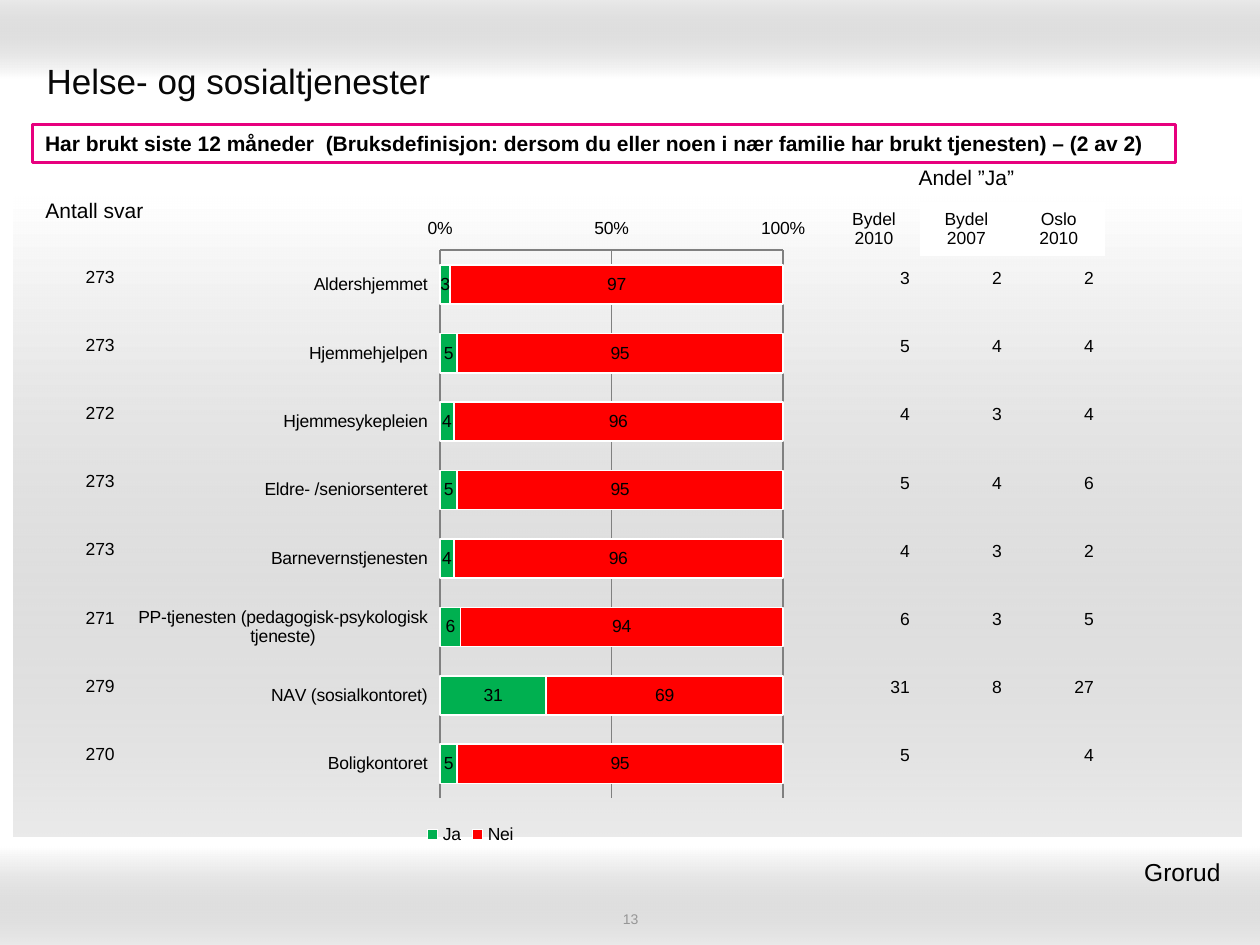
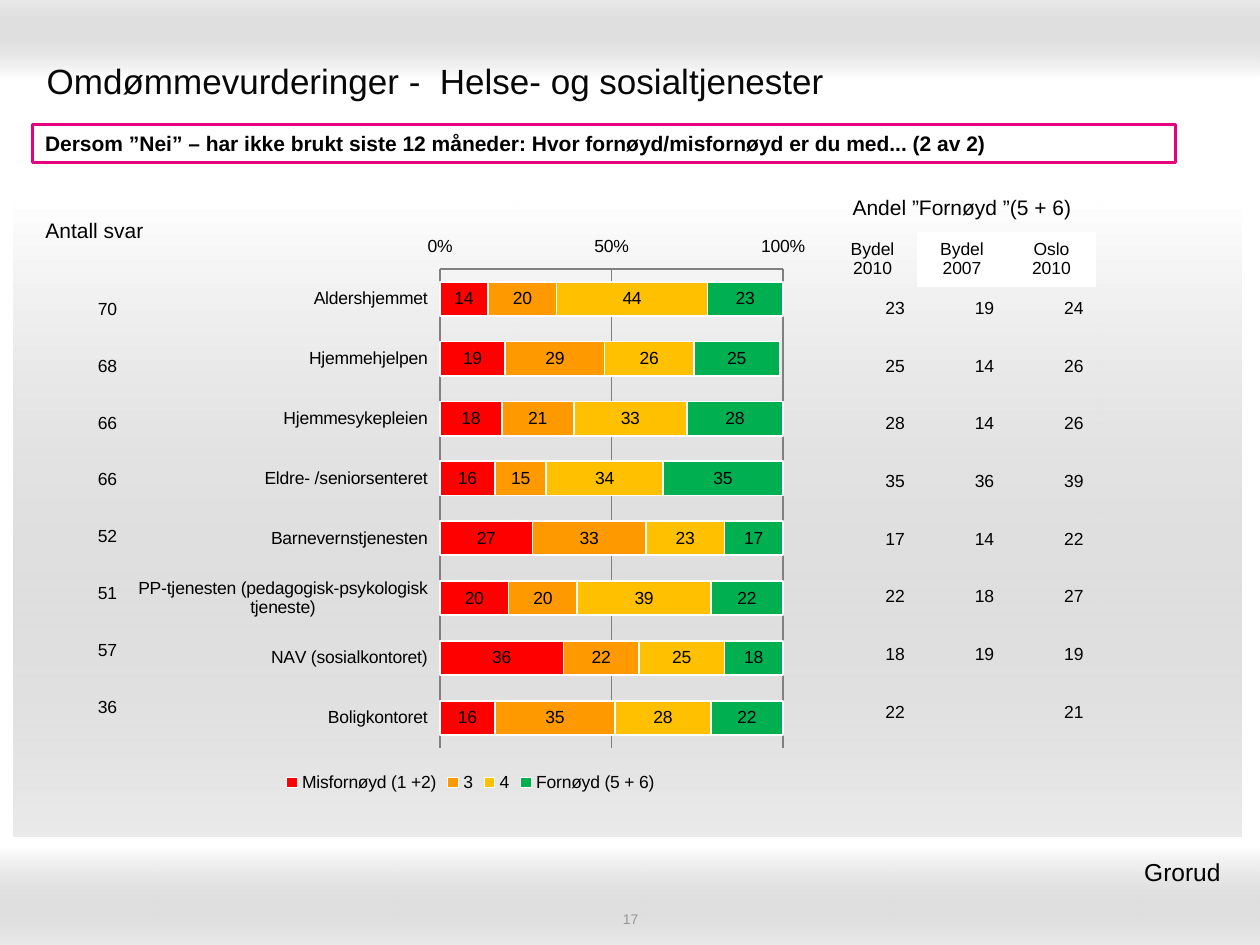
import dataclasses
import typing

import pptx
import pptx.chart.chart
import pptx.chart.data
import pptx.dml.color
import pptx.enum.chart
import pptx.enum.shapes
import pptx.enum.text
import pptx.oxml
import pptx.oxml.ns
import pptx.slide
import pptx.table
import pptx.util

SCALE = 9144
FACE = "Arial"
BLACK, WHITE, PINK, GRAY = "000000", "FFFFFF", "E7007E", "808080"
GREEN, RED, ORANGE, AMBER = "00B050", "FF0000", "FF9900", "FFC000"
NO_STYLE = "{2D5ABB26-0587-4C30-8999-92F81FD0307C}"
ALIGN = pptx.enum.text.PP_ALIGN
MIDDLE = pptx.enum.text.MSO_ANCHOR.MIDDLE
TOPICS = [
    "Aldershjemmet",
    "Hjemmehjelpen",
    "Hjemmesykepleien",
    "Eldre- /seniorsenteret",
    "Barnevernstjenesten",
    "PP-tjenesten (pedagogisk-psykologisk tjeneste)",
    "NAV (sosialkontoret)",
    "Boligkontoret",
]
HEADS = ["Bydel\n2010", "Bydel\n2007", "Oslo\n2010"]


@dataclasses.dataclass(frozen=True)
class Box:
    left: int
    top: int
    width: int
    height: int

    def emu(self) -> list[int]:
        return [side * SCALE for side in dataclasses.astuple(self)]


@dataclasses.dataclass(frozen=True)
class Band:
    box: Box
    angle: int


@dataclasses.dataclass(frozen=True)
class Series:
    name: str
    color: str
    values: list[int]


@dataclasses.dataclass(frozen=True)
class Page:
    title: str
    number: str
    question: str
    chart: Box
    plot: tuple[float, float, float, float]
    series: list[Series]
    share: str
    head: Box
    shares: Box
    rows: list[list[str]]
    label: Box
    count: Box
    counts: list[str]


BANDS = [
    Band(Box(0, 0, 1000, 62), 270),
    Band(Box(0, 672, 1000, 78), 90),
    Band(Box(11, 156, 974, 508), 90),
]
LEGEND = (-0.01, 0.91, 0.98, 0.05)

PAGES = [
    Page(
        title="Helse- og sosialtjenester",
        number="13",
        question="Har brukt siste 12 måneder  (Bruksdefinisjon: dersom du eller noen i nær familie har brukt tjenesten) – (2 av 2)",
        chart=Box(98, 163, 551, 511),
        plot=(0.456, 0.07, 0.494, 0.851),
        series=[
            Series("Ja", GREEN, [3, 5, 4, 5, 4, 6, 31, 5]),
            Series("Nei", RED, [97, 95, 96, 95, 96, 94, 69, 95]),
        ],
        share="Andel ”Ja”",
        head=Box(657, 123, 220, 80),
        shares=Box(659, 194, 219, 433),
        rows=[["3", "2", "2"], ["5", "4", "4"], ["4", "3", "4"], ["5", "4", "6"],
              ["4", "3", "2"], ["6", "3", "5"], ["31", "8", "27"], ["5", "", "4"]],
        label=Box(4, 138, 142, 59),
        count=Box(30, 193, 71, 433),
        counts=["273", "273", "272", "273", "273", "271", "279", "270"],
    ),
    Page(
        title="Omdømmevurderinger -  Helse- og sosialtjenester",
        number="17",
        question="Dersom ”Nei” – har ikke brukt siste 12 måneder: Hvor fornøyd/misfornøyd er du med... (2 av 2)",
        chart=Box(98, 179, 551, 454),
        plot=(0.456, 0.076, 0.494, 0.837),
        series=[
            Series("Misfornøyd (1 +2)", RED, [14, 19, 18, 16, 27, 20, 36, 16]),
            Series("3", ORANGE, [20, 29, 21, 15, 33, 20, 22, 35]),
            Series("4", AMBER, [44, 26, 33, 34, 23, 39, 25, 28]),
            Series("Fornøyd (5 + 6)", GREEN, [23, 25, 28, 35, 17, 22, 18, 22]),
        ],
        share="Andel ”Fornøyd ”(5 + 6)",
        head=Box(657, 147, 213, 80),
        shares=Box(657, 222, 213, 366),
        rows=[["23", "19", "24"], ["25", "14", "26"], ["28", "14", "26"], ["35", "36", "39"],
              ["17", "14", "22"], ["22", "18", "27"], ["18", "19", "19"], ["22", "", "21"]],
        label=Box(4, 154, 142, 59),
        count=Box(51, 223, 52, 361),
        counts=["70", "68", "66", "66", "52", "51", "57", "36"],
    ),
]


def tint(color: typing.Any, code: str) -> None:
    color.rgb = pptx.dml.color.RGBColor.from_string(code)


def style(item: typing.Any, **form: typing.Any) -> None:
    for key, value in form.items():
        setattr(item, key, value)


def paint(item: typing.Any, code: str) -> None:
    item.fill.solid()
    tint(item.fill.fore_color, code)


def ink(font: typing.Any, size: int, code: str = BLACK, bold: bool = False) -> None:
    style(font, name=FACE, size=pptx.util.Pt(size), bold=bold)
    tint(font.color, code)


def stroke(line: typing.Any, code: str, width: float) -> None:
    tint(line.color, code)
    line.width = pptx.util.Pt(width)


def write(frame: typing.Any, text: str, size: int, align: typing.Any,
          code: str = BLACK, bold: bool = False) -> None:
    frame.text = text
    style(frame, word_wrap=True, vertical_anchor=MIDDLE)
    for para in frame.paragraphs:
        para.alignment = align
        ink(para.font, size, code, bold)


def add_rect(slide: pptx.slide.Slide, box: Box) -> typing.Any:
    rect = slide.shapes.add_shape(pptx.enum.shapes.MSO_SHAPE.RECTANGLE, *box.emu())
    rect.shadow.inherit = False
    return rect


def add_band(slide: pptx.slide.Slide, band: Band) -> None:
    rect = add_rect(slide, band.box)
    rect.line.fill.background()
    rect.fill.background()
    empty = rect.element.spPr.find(pptx.oxml.ns.qn("a:noFill"))
    fade = pptx.oxml.parse_xml(
        f'<a:gradFill {pptx.oxml.ns.nsdecls("a")} rotWithShape="1"><a:gsLst>'
        f'<a:gs pos="0"><a:srgbClr val="{WHITE}"/></a:gs>'
        '<a:gs pos="100000"><a:srgbClr val="999999"><a:alpha val="20000"/></a:srgbClr></a:gs>'
        f'</a:gsLst><a:lin ang="{band.angle * 60000}" scaled="1"/></a:gradFill>'
    )
    empty.getparent().replace(empty, fade)


def add_text(slide: pptx.slide.Slide, box: Box, text: str, size: int,
             align: typing.Any, code: str = BLACK) -> None:
    write(slide.shapes.add_textbox(*box.emu()).text_frame, text, size, align, code)


def add_grid(slide: pptx.slide.Slide, box: Box, rows: list[list[str]],
             size: int, align: typing.Any) -> pptx.table.Table:
    frame = slide.shapes.add_table(len(rows), len(rows[0]), *box.emu())
    grid = frame.table
    style(grid, first_row=False, horz_banding=False)
    frame.element.find(".//" + pptx.oxml.ns.qn("a:tableStyleId")).text = NO_STYLE
    for row, texts in zip(grid.rows, rows):
        row.height = box.height * SCALE // len(rows)
        for cell, text in zip(row.cells, texts):
            cell.fill.background()
            write(cell.text_frame, text, size, align)
            cell.vertical_anchor = MIDDLE
    return grid


def add_head(slide: pptx.slide.Slide, page: Page) -> None:
    grid = add_grid(slide, page.head, [[page.share, "", ""], HEADS], 10, ALIGN.CENTER)
    for row, height in zip(grid.rows, (37, 43)):
        row.height = height * SCALE
    first = grid.cell(0, 0)
    first.merge(grid.cell(0, 2))
    ink(first.text_frame.paragraphs[0].font, 12)
    for col in (1, 2):
        paint(grid.cell(1, col), WHITE)


def place(chart: pptx.chart.chart.Chart, tag: str, area: tuple[float, ...], inner: bool) -> None:
    node = chart.element.find(".//" + pptx.oxml.ns.qn(tag))
    old = node.find(pptx.oxml.ns.qn("c:layout"))
    if old is not None:
        node.remove(old)
    target = '<c:layoutTarget val="inner"/>' if inner else ""
    sides = "".join(f'<c:{key} val="{value}"/>' for key, value in zip("xywh", area))
    layout = pptx.oxml.parse_xml(
        f'<c:layout {pptx.oxml.ns.nsdecls("c")}><c:manualLayout>{target}'
        f'<c:xMode val="edge"/><c:yMode val="edge"/>{sides}</c:manualLayout></c:layout>'
    )
    node.insert(0 if inner else 1, layout)


def add_bars(slide: pptx.slide.Slide, page: Page) -> None:
    enum = pptx.enum.chart
    data = pptx.chart.data.CategoryChartData(number_format="0")
    data.categories = TOPICS
    for item in page.series:
        data.add_series(item.name, item.values)
    chart = slide.shapes.add_chart(enum.XL_CHART_TYPE.BAR_STACKED, *page.chart.emu(), data).chart
    style(chart, has_title=False, has_legend=True)
    ink(chart.font, 10)
    style(chart.legend, position=enum.XL_LEGEND_POSITION.BOTTOM, include_in_layout=False)

    low, marks = enum.XL_TICK_LABEL_POSITION.LOW, enum.XL_TICK_MARK
    topics, scale = chart.category_axis, chart.value_axis
    style(topics, reverse_order=True, tick_label_position=low,
          major_tick_mark=marks.NONE, minor_tick_mark=marks.NONE)
    style(scale, minimum_scale=0, maximum_scale=100, major_unit=50, has_major_gridlines=True,
          tick_label_position=low, major_tick_mark=marks.INSIDE, minor_tick_mark=marks.NONE)
    style(scale.tick_labels, number_format="General\\%", number_format_is_linked=False)
    for line in (topics.format.line, scale.format.line, scale.major_gridlines.format.line):
        stroke(line, GRAY, 1)

    plot = chart.plots[0]
    style(plot, gap_width=75, overlap=100, vary_by_categories=False, has_data_labels=True)
    style(plot.data_labels, show_value=True, number_format="0", number_format_is_linked=False,
          position=enum.XL_LABEL_POSITION.CENTER)
    ink(plot.data_labels.font, 10)
    for bars, item in zip(plot.series, page.series):
        paint(bars.format, item.color)
        stroke(bars.format.line, WHITE, 1)
    place(chart, "c:plotArea", page.plot, True)
    place(chart, "c:legend", LEGEND, False)


def add_frame(slide: pptx.slide.Slide, page: Page) -> None:
    for band in BANDS:
        add_band(slide, band)
    title = slide.shapes.title
    slide.shapes.element.append(title.element)
    left, top, width, height = Box(27, 36, 945, 55).emu()
    style(title, left=left, top=top, width=width, height=height)
    write(title.text_frame, page.title, 20, ALIGN.LEFT, "080808")
    add_text(slide, Box(342, 722, 317, 14), page.number, 8, ALIGN.CENTER, "969696")
    add_text(slide, Box(610, 675, 374, 34), "Grorud ", 14, ALIGN.RIGHT)
    rect = add_rect(slide, Box(26, 99, 907, 30))
    paint(rect, WHITE)
    stroke(rect.line, PINK, 2)
    write(rect.text_frame, page.question, 12, ALIGN.LEFT, bold=True)


def main() -> None:
    deck = pptx.Presentation()
    style(deck, slide_width=1000 * SCALE, slide_height=750 * SCALE)
    for page in PAGES:
        slide = deck.slides.add_slide(deck.slide_layouts[5])
        add_frame(slide, page)
        add_bars(slide, page)
        add_grid(slide, page.shares, page.rows, 10, ALIGN.RIGHT)
        add_head(slide, page)
        add_grid(slide, page.label, [["Antall svar"]], 12, ALIGN.CENTER)
        add_grid(slide, page.count, [[count] for count in page.counts], 10, ALIGN.RIGHT)
    deck.save("out.pptx")


if __name__ == "__main__":
    main()
